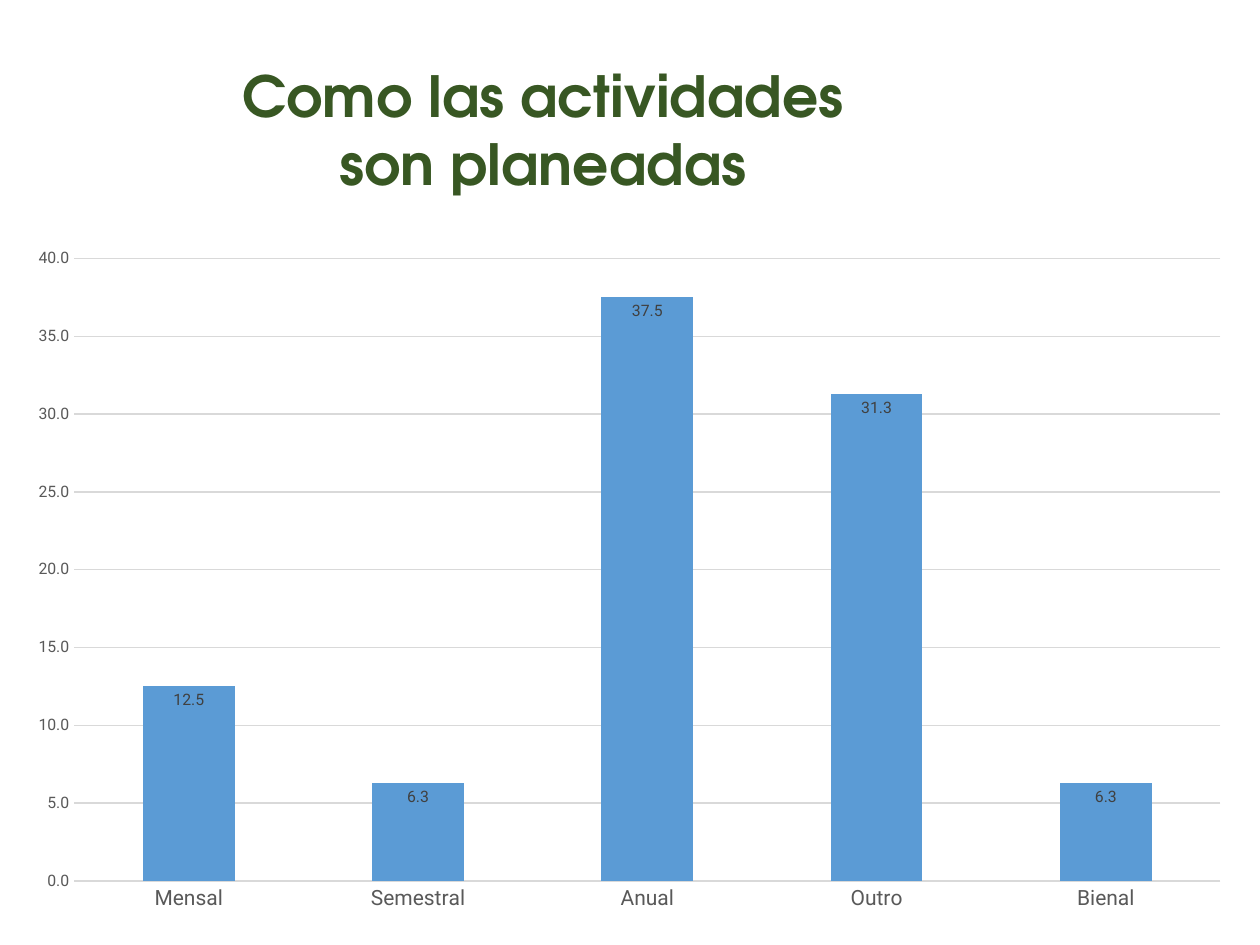
"""Build a slide with a column chart of how often activities are planned."""
from dataclasses import dataclass

import pptx
import pptx.chart.data
import pptx.dml.color
import pptx.enum.chart
import pptx.enum.text
import pptx.util

Cm = pptx.util.Cm
Pt = pptx.util.Pt
COLORS = {"title": "385723", "bar": "5B9BD5", "axis": "595959",
          "label": "404040", "grid": "D9D9D9"}
TITLE_FONT = "TeX Gyre Adventor"
CHART_FONT = "Roboto"


@dataclass
class Frequency:
    name: str
    percent: float


FREQUENCIES = [
    Frequency("Mensal", 12.5),
    Frequency("Semestral", 6.3),
    Frequency("Anual", 37.5),
    Frequency("Outro", 31.3),
    Frequency("Bienal", 6.3),
]


def rgb(name: str) -> pptx.dml.color.RGBColor:
    return pptx.dml.color.RGBColor.from_string(COLORS[name])


def style_font(font, face: str, size: float, color: str, bold: bool = False) -> None:
    font.name = face
    font.size = Pt(size)
    font.bold = bold
    font.color.rgb = rgb(color)


def style_line(line) -> None:
    line.color.rgb = rgb("grid")
    line.width = Pt(0.75)


def style_axis(axis, size: float) -> None:
    axis.major_tick_mark = pptx.enum.chart.XL_TICK_MARK.NONE
    axis.minor_tick_mark = pptx.enum.chart.XL_TICK_MARK.NONE
    style_font(axis.tick_labels.font, CHART_FONT, size, "axis")


def add_title(slide, text: str) -> None:
    title = slide.shapes.title
    title.left, title.top, title.width, title.height = Cm(3.68), Cm(0.99), Cm(14.53), Cm(2.44)
    frame = title.text_frame
    frame.word_wrap = True
    frame.auto_size = pptx.enum.text.MSO_AUTO_SIZE.NONE
    frame.vertical_anchor = pptx.enum.text.MSO_ANCHOR.TOP
    frame.margin_top = Cm(0.23)
    paragraph = frame.paragraphs[0]
    paragraph.alignment = pptx.enum.text.PP_ALIGN.CENTER
    paragraph.line_spacing = Pt(38.9)
    run = paragraph.add_run()
    run.text = text
    style_font(run.font, TITLE_FONT, 32.4, "title", bold=True)


def add_frequency_chart(slide, frequencies: list[Frequency]) -> None:
    data = pptx.chart.data.CategoryChartData(number_format="0.0")
    data.categories = [frequency.name for frequency in frequencies]
    data.add_series("Series 1", [frequency.percent for frequency in frequencies])
    chart = slide.shapes.add_chart(
        pptx.enum.chart.XL_CHART_TYPE.COLUMN_STACKED,
        Cm(0.28), Cm(4.75), Cm(24.82), Cm(13.89), data).chart
    chart.has_title = False
    chart.has_legend = False
    chart.font.name = CHART_FONT
    chart.font.size = Pt(10)

    style_axis(chart.category_axis, 12)
    style_line(chart.category_axis.format.line)
    percent_axis = chart.value_axis
    style_axis(percent_axis, 9)
    percent_axis.minimum_scale, percent_axis.maximum_scale = 0, 40
    percent_axis.major_unit = 5
    percent_axis.format.line.fill.background()
    percent_axis.has_major_gridlines = True
    style_line(percent_axis.major_gridlines.format.line)
    percent_axis.tick_labels.number_format = "0.0"
    percent_axis.tick_labels.number_format_is_linked = False

    plot = chart.plots[0]
    plot.gap_width = 150
    plot.overlap = 100
    plot.vary_by_categories = False
    bars = plot.series[0]
    bars.format.fill.solid()
    bars.format.fill.fore_color.rgb = rgb("bar")
    labels = bars.data_labels
    labels.show_value = True
    labels.position = pptx.enum.chart.XL_LABEL_POSITION.INSIDE_END
    labels.number_format = "0.0"
    labels.number_format_is_linked = False
    style_font(labels.font, CHART_FONT, 9, "label")


def main() -> None:
    presentation = pptx.Presentation()
    presentation.slide_width = Cm(25.4)
    presentation.slide_height = Cm(19.05)
    slide = presentation.slides.add_slide(presentation.slide_layouts[5])
    add_title(slide, "Como las actividades son planeadas")
    add_frequency_chart(slide, FREQUENCIES)
    presentation.save("out.pptx")


if __name__ == "__main__":
    main()
